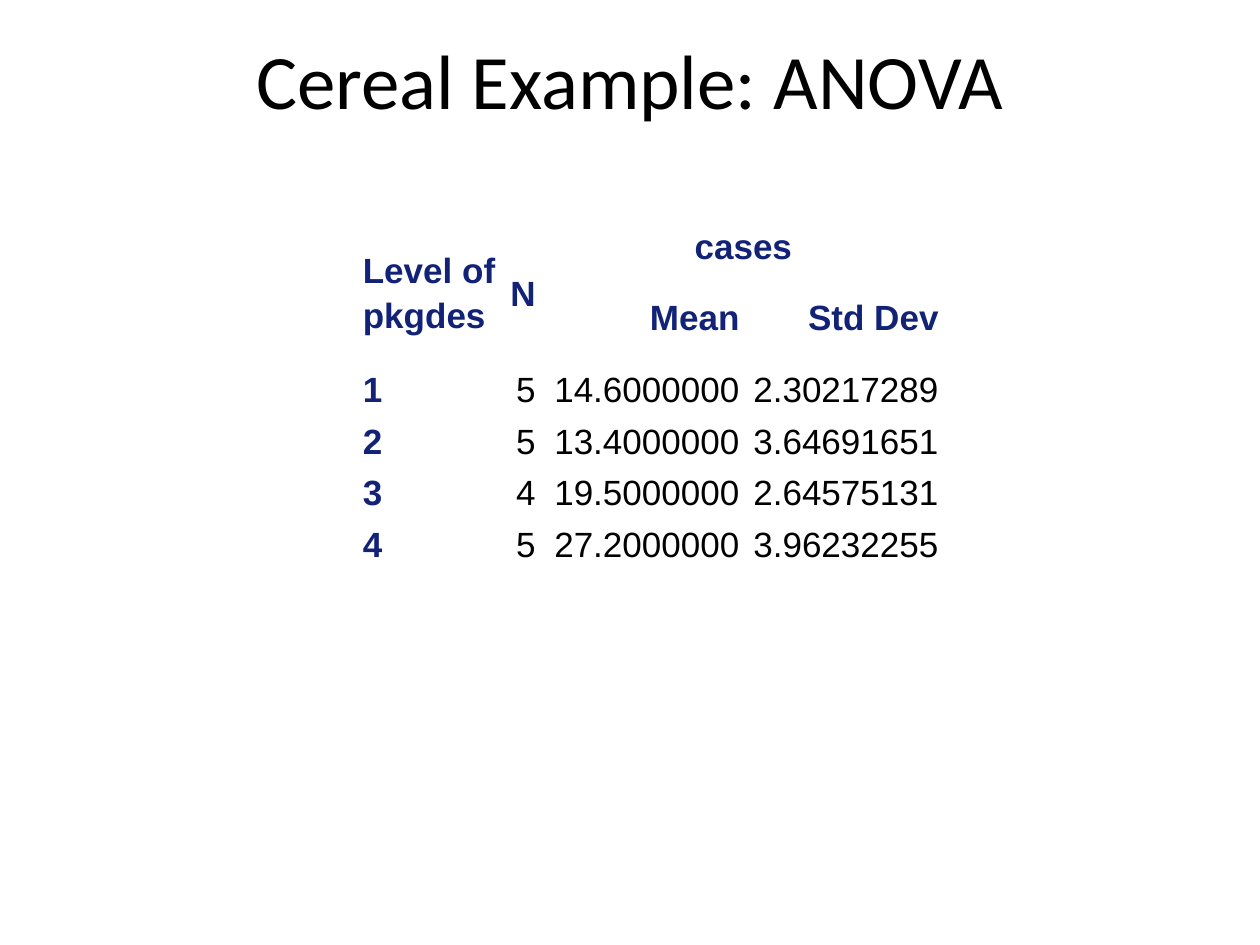
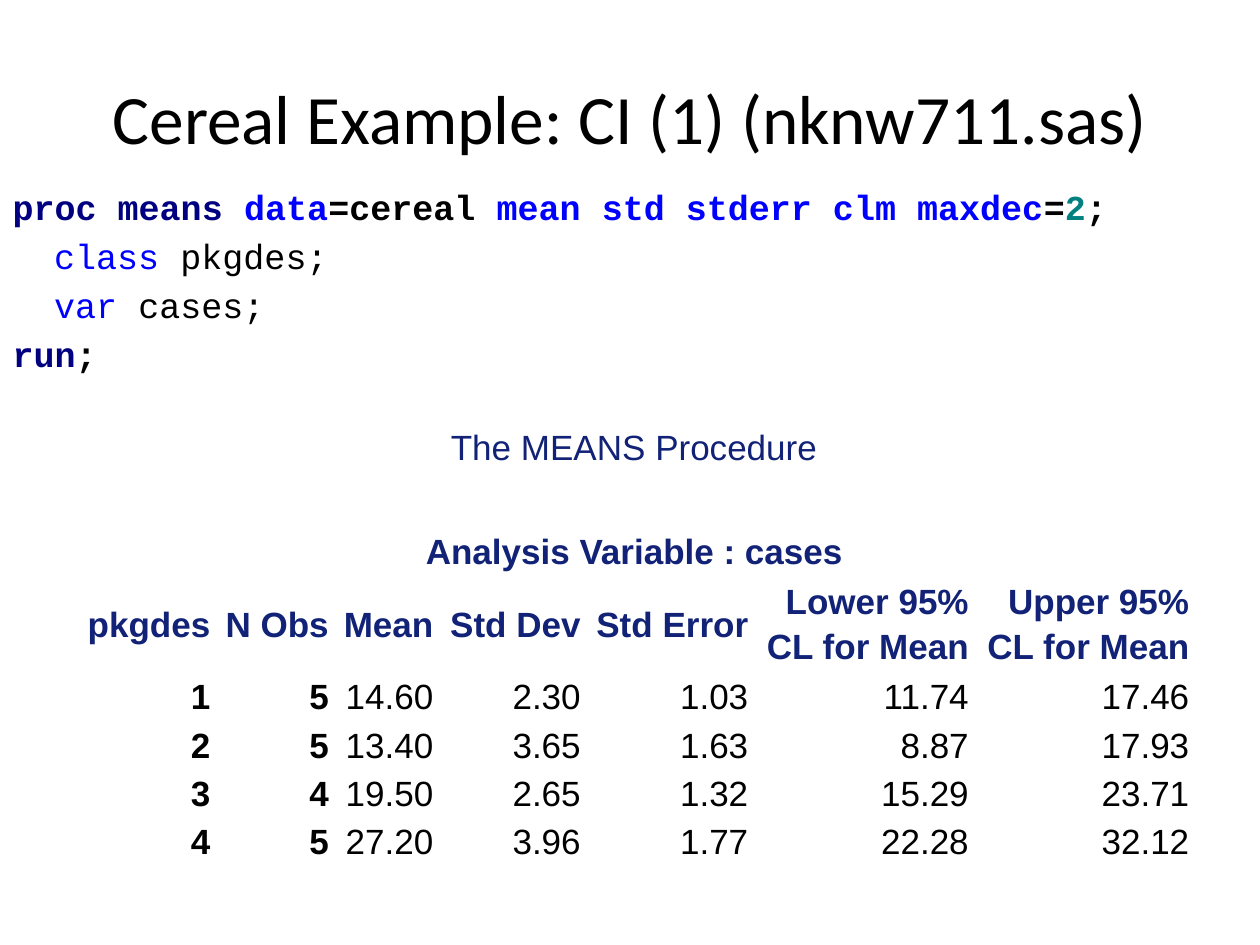
from lxml.etree import SubElement
from pptx import Presentation
from pptx.dml.color import RGBColor
from pptx.enum.text import MSO_ANCHOR as Anchor, MSO_AUTO_SIZE as AutoSize, PP_ALIGN as Align
from pptx.oxml.ns import qn
from pptx.util import Inches, Pt

BLACK = RGBColor(0x00, 0x00, 0x00)
HEADING = RGBColor(0x11, 0x22, 0x77)
NAVY = RGBColor(0x00, 0x00, 0x80)
BLUE = RGBColor(0x00, 0x00, 0xFF)
TEAL = RGBColor(0x00, 0x80, 0x80)

TITLE_AND_BODY, TITLE_ONLY = 1, 5

GROUP_HEADERS = [["Level of\vpkgdes", "N", "cases", ""], ["", "", "Mean", "Std Dev"]]
GROUP_ROWS = [
    ["1", "5", "14.6000000", "2.30217289"],
    ["2", "5", "13.4000000", "3.64691651"],
    ["3", "4", "19.5000000", "2.64575131"],
    ["4", "5", "27.2000000", "3.96232255"],
]
INTERVAL_HEADERS = [
    ["Analysis Variable : cases"] + [""] * 6,
    ["pkgdes", "N Obs", "Mean", "Std Dev", "Std Error",
     "Lower 95%\vCL for Mean", "Upper 95%\vCL for Mean"],
]
INTERVAL_ROWS = [
    ["1", "5", "14.60", "2.30", "1.03", "11.74", "17.46"],
    ["2", "5", "13.40", "3.65", "1.63", "8.87", "17.93"],
    ["3", "4", "19.50", "2.65", "1.32", "15.29", "23.71"],
    ["4", "5", "27.20", "3.96", "1.77", "22.28", "32.12"],
]
CODE_LINES = [
    (True, 0, [("proc means ", NAVY), ("data", BLUE), ("=cereal ", BLACK),
               ("mean std stderr clm maxdec", BLUE), ("=", BLACK), ("2", TEAL), (";", BLACK)]),
    (False, 0.33, [("class ", BLUE), ("pkgdes;", BLACK)]),
    (False, 0.33, [("var", BLUE), (" cases;", BLACK)]),
    (True, 0, [("run", NAVY), (";", BLACK)]),
]


class CerealDeck:
    """Holds the deck style and the current slide, and adds elements to it."""

    def __init__(self):
        self.deck = Presentation()
        self.deck.slide_width, self.deck.slide_height = Inches(10), Inches(7.5)
        self.page = None

    def place(self, shape, left, top, width, height):
        shape.left, shape.top = Inches(left), Inches(top)
        shape.width, shape.height = Inches(width), Inches(height)

    def style(self, para, color=None, bold=False, size=20, name="Arial"):
        para.font.name, para.font.size, para.font.bold = name, Pt(size), bold
        if color is not None:
            para.font.color.rgb = color

    def add_page(self, layout, title, top, size=44):
        self.page = self.deck.slides.add_slide(self.deck.slide_layouts[layout])
        box = self.page.shapes.title
        self.place(box, 0.5, top, 9, 1.25)
        frame = box.text_frame
        frame.text = title
        frame.auto_size = AutoSize.NONE
        frame.vertical_anchor = Anchor.MIDDLE
        para = frame.paragraphs[0]
        para.alignment = Align.CENTER
        self.style(para, BLACK, size=size, name="Calibri")

    def add_code(self, lines, left, top, width, height):
        box = self.page.placeholders[1]
        self.place(box, left, top, width, height)
        frame = box.text_frame
        frame.auto_size = AutoSize.NONE
        for number, (bold, indent, spans) in enumerate(lines):
            para = frame.add_paragraph() if number else frame.paragraphs[0]
            self.style(para, bold=bold, name="Courier New")
            properties = para.font._element.getparent()
            properties.set("marL", str(Inches(0.38)))
            properties.set("indent", str(Inches(indent - 0.38)))
            bullet = SubElement(properties, qn("a:buNone"))
            para.font._element.addprevious(bullet)
            for text, color in spans:
                span = para.add_run()
                span.text = text
                span.font.color.rgb = color

    def add_label(self, text, left, top, width, height):
        box = self.page.shapes.add_textbox(
            Inches(left), Inches(top), Inches(width), Inches(height))
        box.text_frame.word_wrap = False
        box.text_frame.text = text
        self.style(box.text_frame.paragraphs[0], HEADING)

    def add_cell(self, cell, text, color, bold, align):
        cell.fill.background()
        cell.vertical_anchor = Anchor.MIDDLE
        cell.margin_left = cell.margin_right = Inches(0.05)
        cell.margin_top = cell.margin_bottom = 0
        cell.text_frame.text = text
        para = cell.text_frame.paragraphs[0]
        para.alignment = align
        para.line_spacing = 1.15
        para.space_before = para.space_after = Pt(5)
        self.style(para, color, bold)

    def add_table(self, headers, rows, left, top, widths, row_height,
                  label_columns, label_color, left_columns, merges):
        values = headers + rows
        heights = [0.38, 0.74] + [row_height] * len(rows)
        table = self.page.shapes.add_table(
            len(values), len(widths), Inches(left), Inches(top),
            Inches(sum(widths)), Inches(sum(heights))).table
        table.first_row = table.horz_banding = False
        for column, width in zip(table.columns, widths):
            column.width = Inches(width)
        for row, height in zip(table.rows, heights):
            row.height = Inches(height)
        centred = [(top_row, first) for top_row, first, _, last in merges if last > first]
        for row, texts in enumerate(values):
            for column, text in enumerate(texts):
                header = row < len(headers)
                label = column < label_columns
                align = Align.LEFT if column < left_columns else Align.RIGHT
                if (row, column) in centred:
                    align = Align.CENTER
                color = HEADING if header else label_color if label else BLACK
                self.add_cell(table.cell(row, column), text, color, header or label, align)
        for top_row, first, bottom_row, last in merges:
            table.cell(top_row, first).merge(table.cell(bottom_row, last))


def main():
    cereal = CerealDeck()

    cereal.add_page(TITLE_ONLY, "Cereal Example: ANOVA", 0)
    cereal.add_table(
        GROUP_HEADERS, GROUP_ROWS, 2.83, 1.75, [1.17, 0.3, 1.62, 1.58], 0.41,
        label_columns=1, label_color=HEADING, left_columns=1,
        merges=[(0, 0, 1, 0), (0, 1, 1, 1), (0, 2, 0, 3)])

    cereal.add_page(TITLE_AND_BODY, "Cereal Example: CI (1) (nknw711.sas)", 0.3, 39.6)
    cereal.add_code(CODE_LINES, 0, 1.42, 10, 1.83)
    cereal.add_label("The MEANS Procedure", 3.48, 3.33, 3.13, 0.44)
    cereal.add_table(
        INTERVAL_HEADERS, INTERVAL_ROWS, 0.58, 4.17,
        [1.14, 0.94, 0.83, 1.17, 1.33, 1.75, 1.75], 0.38,
        label_columns=2, label_color=BLACK, left_columns=0, merges=[(0, 0, 0, 6)])

    cereal.deck.save("out.pptx")


if __name__ == "__main__":
    main()
